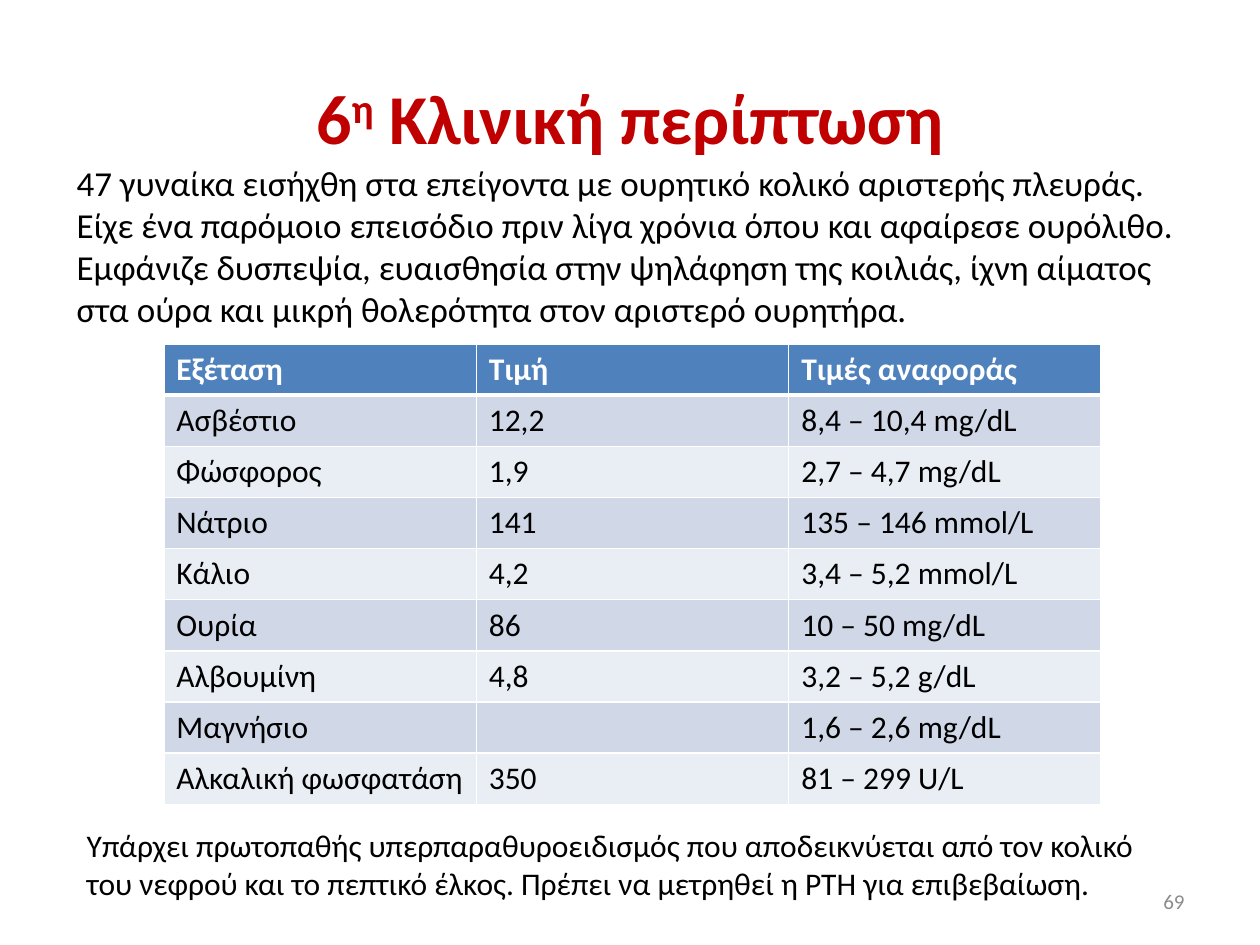
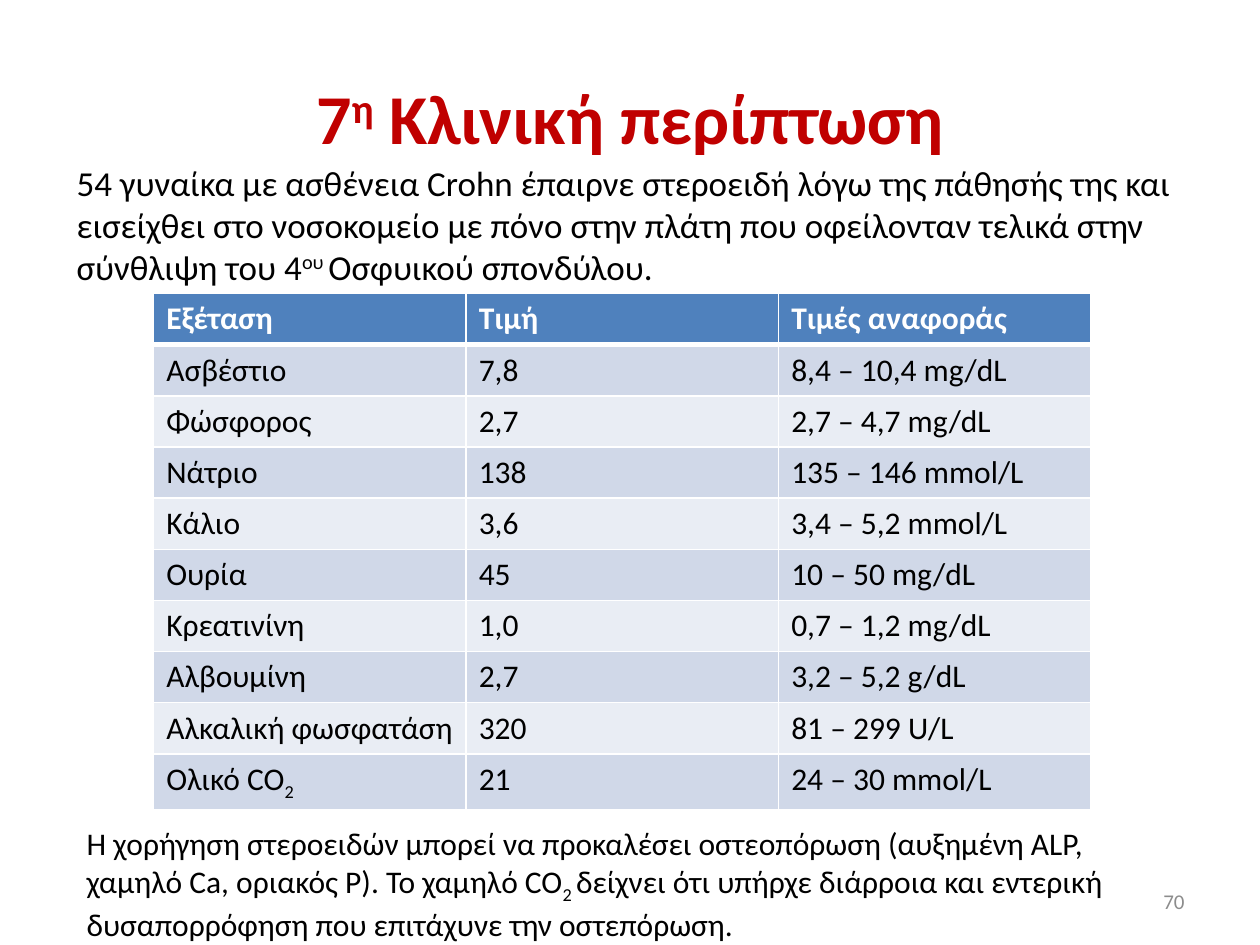
from lxml import etree
from pptx import Presentation
from pptx.dml.color import RGBColor
from pptx.enum import text
from pptx.oxml import ns
from pptx.util import Inches, Pt

FONT = "Calibri"
RED = RGBColor(0xC0, 0x00, 0x00)
BLACK = RGBColor(0x00, 0x00, 0x00)
WHITE = RGBColor(0xFF, 0xFF, 0xFF)
GREY = RGBColor(0x8C, 0x8C, 0x8C)
HEADER_BLUE = RGBColor(0x4F, 0x81, 0xBD)
BANDS = (RGBColor(0xD0, 0xD8, 0xE8), RGBColor(0xE9, 0xED, 0xF4))

SUPER, SUB = 30, -25
COLUMN_WIDTH = 2.48
ROW_HEIGHT = 0.406
HEADER = ("Εξέταση", "Τιμή", "Τιμές αναφοράς")
REFERENCES = {
    "Ασβέστιο": "8,4 – 10,4 mg/dL",
    "Φώσφορος": "2,7 – 4,7 mg/dL",
    "Νάτριο": "135 – 146 mmol/L",
    "Κάλιο": "3,4 – 5,2 mmol/L",
    "Ουρία": "10 – 50 mg/dL",
    "Κρεατινίνη": "0,7 – 1,2 mg/dL",
    "Αλβουμίνη": "3,2 – 5,2 g/dL",
    "Μαγνήσιο": "1,6 – 2,6 mg/dL",
    "Αλκαλική φωσφατάση": "81 – 299 U/L",
    "Ολικό CO2": "24 – 30 mmol/L",
}
LABEL_RUNS = {"Ολικό CO2": ["Ολικό CO", ("2", SUB)]}

CASES = [
    {
        "ordinal": "6",
        "history": [
            "47 γυναίκα εισήχθη στα επείγοντα με ουρητικό κολικό αριστερής πλευράς. "
            "Είχε ένα παρόμοιο επεισόδιο πριν λίγα χρόνια όπου και αφαίρεσε ουρόλιθο. "
            "Εμφάνιζε δυσπεψία, ευαισθησία στην ψηλάφηση της κοιλιάς, ίχνη αίματος "
            "στα ούρα και μικρή θολερότητα στον αριστερό ουρητήρα."
        ],
        "table_at": (1.3, 2.73),
        "values": {
            "Ασβέστιο": "12,2", "Φώσφορος": "1,9", "Νάτριο": "141",
            "Κάλιο": "4,2", "Ουρία": "86", "Αλβουμίνη": "4,8",
            "Μαγνήσιο": "", "Αλκαλική φωσφατάση": "350",
        },
        "diagnosis": [
            "Υπάρχει πρωτοπαθής υπερπαραθυροειδισμός που αποδεικνύεται από τον κολικό "
            "του νεφρού και το πεπτικό έλκος. Πρέπει να μετρηθεί η PTH για επιβεβαίωση."
        ],
        "diagnosis_box": (0.59, 6.51, 8.9, 0.71),
        "page": "69",
    },
    {
        "ordinal": "7",
        "history": [
            "54 γυναίκα με ασθένεια Crohn έπαιρνε στεροειδή λόγω της πάθησής της και "
            "εισείχθει στο νοσοκομείο με πόνο στην πλάτη που οφείλονταν τελικά στην "
            "σύνθλιψη του 4", ("ου ", SUPER), "Οσφυικού σπονδύλου."
        ],
        "table_at": (1.22, 2.33),
        "values": {
            "Ασβέστιο": "7,8", "Φώσφορος": "2,7", "Νάτριο": "138",
            "Κάλιο": "3,6", "Ουρία": "45", "Κρεατινίνη": "1,0",
            "Αλβουμίνη": "2,7", "Αλκαλική φωσφατάση": "320", "Ολικό CO2": "21",
        },
        "diagnosis": [
            "H χορήγηση στεροειδών μπορεί να προκαλέσει οστεοπόρωση (αυξημένη ALP, "
            "χαμηλό Ca, οριακός P). To χαμηλό CO", ("2 ", SUB),
            "δείχνει ότι υπήρχε διάρροια και εντερική δυσαπορρόφηση που επιτάχυνε "
            "την οστεπόρωση."
        ],
        "diagnosis_box": (0.59, 6.49, 8.9, 1.01),
        "page": "70",
    },
]


def write(tf, runs, size, color, bold=False, align=text.PP_ALIGN.LEFT):
    p = tf.paragraphs[0]
    p.alignment = align
    p.font.name, p.font.size, p.font.bold = FONT, Pt(size), bold
    p.font.color.rgb = color
    for run in runs:
        content, baseline = run if isinstance(run, tuple) else (run, 0)
        r = p.add_run()
        r.text = content
        if baseline:
            r._r.get_or_add_rPr().set("baseline", str(baseline * 1000))
    return p


def add_text(s, box, runs, size, color, anchor=text.MSO_ANCHOR.TOP, **style):
    tf = s.shapes.add_textbox(*map(Inches, box)).text_frame
    tf.word_wrap = True
    tf.vertical_anchor = anchor
    return write(tf, runs, size, color, **style)


def set_borders(cell, bottom):
    tc_pr = cell._tc.get_or_add_tcPr()
    widths = {"lnL": 1, "lnR": 1, "lnT": 1, "lnB": bottom}
    for i, (side, width) in enumerate(widths.items()):
        ln = etree.Element(ns.qn("a:" + side), w=str(Pt(width)))
        fill = etree.SubElement(ln, ns.qn("a:solidFill"))
        etree.SubElement(fill, ns.qn("a:srgbClr"), val=str(WHITE))
        tc_pr.insert(i, ln)


def add_lab_table(s, at, values):
    rows = [HEADER] + [(test, value, REFERENCES[test]) for test, value in values.items()]
    left, top = map(Inches, at)
    table = s.shapes.add_table(
        len(rows), len(HEADER), left, top,
        Inches(COLUMN_WIDTH * len(HEADER)), Inches(ROW_HEIGHT * len(rows)),
    ).table
    for i, row in enumerate(rows):
        is_header = i == 0
        for j, content in enumerate(row):
            cell = table.cell(i, j)
            cell.fill.solid()
            cell.fill.fore_color.rgb = HEADER_BLUE if is_header else BANDS[(i - 1) % 2]
            set_borders(cell, 3 if i == 0 else 1)
            if content:
                write(cell.text_frame, LABEL_RUNS.get(content, [content]), 18,
                      WHITE if is_header else BLACK, bold=is_header)


def add_case(prs, case):
    s = prs.slides.add_slide(prs.slide_layouts[6])
    middle = text.MSO_ANCHOR.MIDDLE
    add_text(s, (0.5, 0.3, 9, 1.25),
             [case["ordinal"], ("η", SUPER), " Κλινική περίπτωση"],
             40, RED, middle, bold=True, align=text.PP_ALIGN.CENTER)
    p = add_text(s, (0.51, 1.23, 9, 4.95), case["history"], 20, BLACK)
    p.space_before = Pt(4)
    add_lab_table(s, case["table_at"], case["values"])
    add_text(s, case["diagnosis_box"], case["diagnosis"], 18, BLACK)
    add_text(s, (7.17, 6.95, 2.33, 0.4), [case["page"]], 12, GREY, middle,
             align=text.PP_ALIGN.RIGHT)


def main():
    prs = Presentation()
    prs.slide_width, prs.slide_height = Inches(10), Inches(7.5)
    for case in CASES:
        add_case(prs, case)
    prs.save("out.pptx")


if __name__ == "__main__":
    main()
